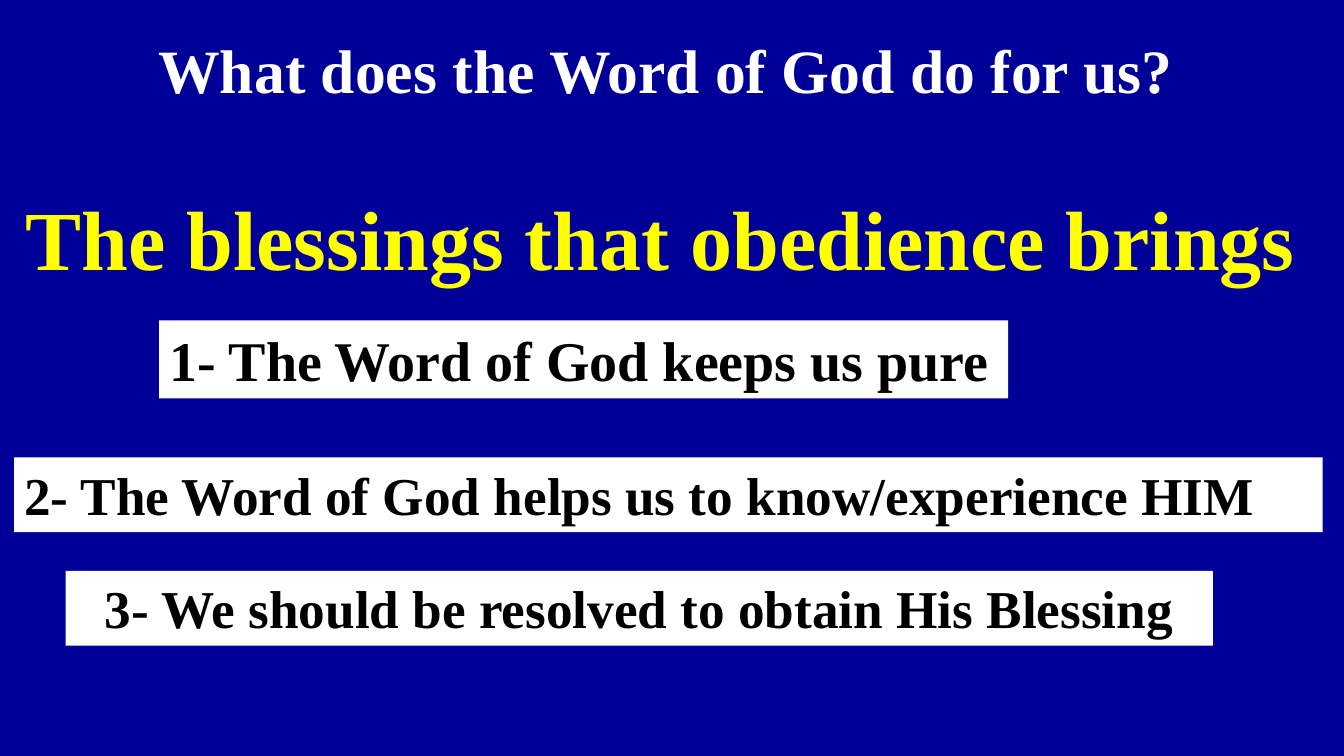
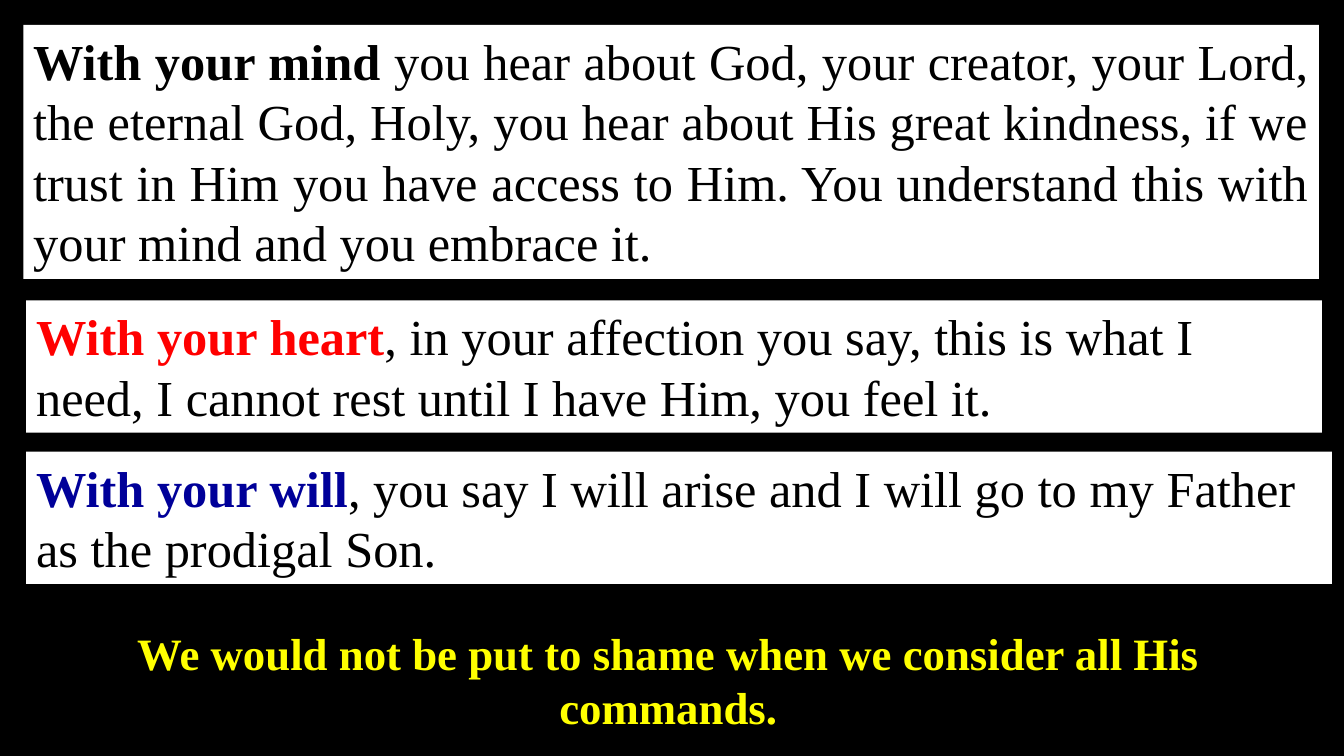
from dataclasses import dataclass
from typing import Optional

from pptx import Presentation
from pptx import util as u
from pptx.dml.color import RGBColor
from pptx.enum import shapes, text

# Shared style
COLORS = {
    "navy": "000099",
    "black": "000000",
    "white": "FFFFFF",
    "yellow": "FFFF00",
    "red": "FF0000",
}
FONT = "Times New Roman"
WIDTH, HEIGHT = u.Inches(13.33), u.Inches(7.5)
TITLE_ONLY = 5
LEFT, CENTER, JUSTIFY = (
    text.PP_ALIGN.LEFT, text.PP_ALIGN.CENTER, text.PP_ALIGN.JUSTIFY)


@dataclass(frozen=True)
class Run:
    text: str
    color: str = "black"
    bold: bool = True


@dataclass(frozen=True)
class Block:
    """A text block; box is left, top, width, height in percent of the slide."""
    box: tuple[float, float, float, float]
    size: int
    runs: tuple[Run, ...]
    align: text.PP_ALIGN = LEFT
    fill: Optional[str] = None
    is_title: bool = False


@dataclass(frozen=True)
class Page:
    background: str
    blocks: tuple[Block, ...]


def rgb(name: str) -> RGBColor:
    return RGBColor.from_string(COLORS[name])


def place(box: tuple[float, float, float, float]) -> list[int]:
    return [round(share * full / 100)
            for share, full in zip(box, (WIDTH, HEIGHT) * 2)]


def write(sp, block: Block) -> None:
    tf = sp.text_frame
    tf.word_wrap = True
    tf.auto_size = text.MSO_AUTO_SIZE.NONE
    tf.vertical_anchor = text.MSO_ANCHOR.TOP
    p = tf.paragraphs[0]
    p.alignment = block.align
    for run in block.runs:
        r = p.add_run()
        r.text = run.text
        r.font.name = FONT
        r.font.size = u.Pt(block.size)
        r.font.bold = run.bold
        r.font.color.rgb = rgb(run.color)


def draw_block(s, block: Block) -> None:
    area = place(block.box)
    if block.is_title:
        sp = s.shapes.title
        sp.left, sp.top, sp.width, sp.height = area
    elif block.fill:
        sp = s.shapes.add_shape(shapes.MSO_SHAPE.RECTANGLE, *area)
        sp.shadow.inherit = False
        sp.fill.solid()
        sp.fill.fore_color.rgb = rgb(block.fill)
        sp.line.fill.background()
    else:
        sp = s.shapes.add_textbox(*area)
    write(sp, block)


def draw_page(prs, page: Page) -> None:
    s = prs.slides.add_slide(prs.slide_layouts[TITLE_ONLY])
    s.background.fill.solid()
    s.background.fill.fore_color.rgb = rgb(page.background)
    for block in page.blocks:
        draw_block(s, block)


# Content
BLESSINGS = Page("navy", (
    Block((11.03, 3.6, 77.72, 11.2), 44,
          (Run("What does the Word of God do for us?", "white"),),
          is_title=True),
    Block((0.68, 24, 96.92, 14.8), 60,
          (Run("The blessings that obedience brings", "yellow"),), CENTER),
    Block((11.85, 42.4, 63.17, 10.3), 40,
          (Run("1- The Word of God keeps us pure"),), fill="white"),
    Block((1.05, 60.5, 97.37, 9.9), 38,
          (Run("2- The Word of God helps us to know/experience HIM"),),
          fill="white"),
    Block((4.88, 75.5, 85.37, 9.9), 38,
          (Run("3- We should be resolved to obtain His Blessing"),),
          CENTER, "white"),
))

RESPONSE = Page("black", (
    Block((1.73, 3.3, 96.4, 33.6), 36, (
        Run("With your mind"),
        Run(" you hear about God, your creator, your Lord, the eternal God, "
            "Holy, you hear about His great kindness, if we trust in Him you "
            "have access to Him. You understand this with your mind and you "
            "embrace it.", bold=False)), JUSTIFY, "white"),
    Block((1.95, 39.75, 96.4, 17.5), 36, (
        Run("With your heart", "red"),
        Run(", in your affection you say, this is what I need, I cannot rest "
            "until I have Him, you feel it.", bold=False)), fill="white"),
    Block((1.95, 59.75, 97.15, 17.5), 36, (
        Run("With your will", "navy"),
        Run(", you say I will arise and I will go to my Father as the "
            "prodigal Son.", bold=False)), fill="white"),
    Block((1.73, 82.1, 96, 15.7), 32,
          (Run("We would not be put to shame when we consider all His "
               "commands.", "yellow"),), CENTER, is_title=True),
))


def main() -> None:
    prs = Presentation()
    prs.slide_width, prs.slide_height = WIDTH, HEIGHT
    for page in (BLESSINGS, RESPONSE):
        draw_page(prs, page)
    prs.save("out.pptx")


if __name__ == "__main__":
    main()
